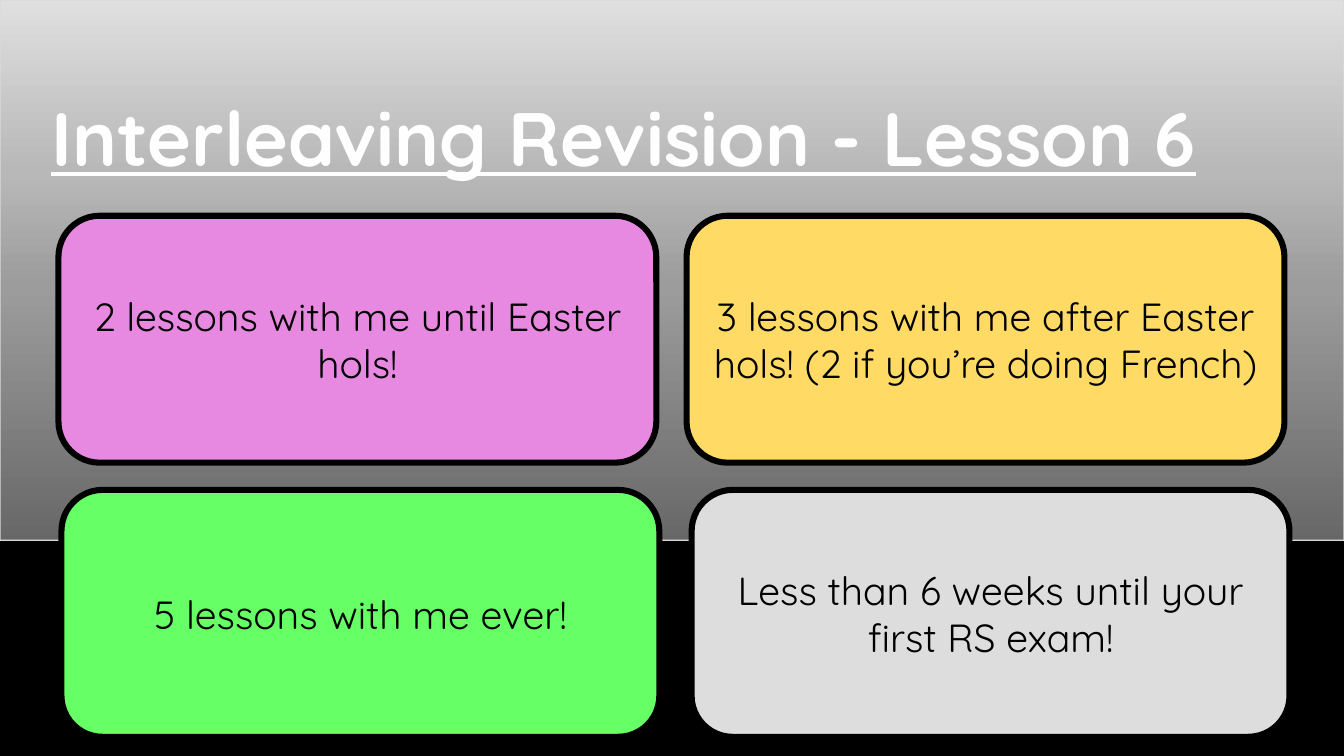
"""Build the revision lesson slide with a title and four cards."""
from dataclasses import dataclass

import lxml.etree
import pptx
import pptx.dml.color
import pptx.enum.shapes
import pptx.enum.text
import pptx.oxml.ns
import pptx.shapes.autoshape
import pptx.slide
import pptx.text.text
import pptx.util

RGB = pptx.dml.color.RGBColor
PX = 9144
FONT = "Quicksand"
BLACK = RGB(0x00, 0x00, 0x00)
WHITE = RGB(0xFE, 0xFE, 0xFE)
EDGE = RGB(0xDA, 0xDA, 0xDA)
PINK = RGB(0xE7, 0x89, 0xE0)
GOLD = RGB(0xFF, 0xDA, 0x65)
GREEN = RGB(0x66, 0xFF, 0x66)
GREY = RGB(0xDD, 0xDD, 0xDD)
STOPS = (
    (0, RGB(0x61, 0x61, 0x61)),
    (50, RGB(0x9C, 0x9C, 0x9C)),
    (70, RGB(0xB8, 0xB8, 0xB8)),
    (100, RGB(0xDF, 0xDF, 0xDF)),
)
PANEL = (
    (0, 0), (0, 536), (218, 536), (260, 567), (262, 568), (265, 569),
    (267, 568), (270, 567), (311, 536), (1333, 536),
)
CARD_W, CARD_H = 593, 245


@dataclass(frozen=True)
class Card:
    """A rounded card, placed in px."""
    left: int
    top: int
    fill: RGB
    text: str


CARDS = (
    Card(681, 214, GOLD, "3 lessons with me after Easter hols! (2 if you’re doing French)"),
    Card(58, 214, PINK, "2 lessons with me until Easter hols!"),
    Card(61, 486, GREEN, "5 lessons with me ever!"),
    Card(686, 486, GREY, "Less than 6 weeks until your first RS exam!"),
)


def px(size: int) -> pptx.util.Emu:
    """Turn px into EMU."""
    return pptx.util.Emu(size * PX)


def add_node(base: lxml.etree._Element, tag: str, **attrs: str) -> lxml.etree._Element:
    """Append a drawing element to base."""
    return lxml.etree.SubElement(base, pptx.oxml.ns.qn(tag), attrs)


def add_run(par: pptx.text.text._Paragraph, text: str, size: int, tint: RGB) -> pptx.text.text._Run:
    """Add one styled run."""
    run = par.add_run()
    run.text = text
    run.font.size = pptx.util.Pt(size)
    run.font.color.rgb = tint
    run.font.name = FONT
    return run


def style(shape: pptx.shapes.autoshape.Shape, tint: RGB, width: float) -> None:
    """Set the outline and drop the shadow."""
    shape.shadow.inherit = False
    shape.line.color.rgb = tint
    shape.line.width = pptx.util.Pt(width)


def draw_panel(slide: pptx.slide.Slide) -> None:
    """Draw the shaded panel behind everything."""
    form = slide.shapes.build_freeform(1333, 0, scale=PX)
    form.add_line_segments(PANEL, close=True)
    panel = form.convert_to_shape()
    style(panel, EDGE, 1)
    panel.fill.gradient()
    panel.fill.gradient_angle = 90
    stops = panel._element.spPr.find(".//" + pptx.oxml.ns.qn("a:gsLst"))
    for old in list(stops):
        stops.remove(old)
    for spot, tint in STOPS:
        stop = add_node(stops, "a:gs", pos=str(spot * 1000))
        add_node(stop, "a:srgbClr", val=str(tint))
    slide.shapes._spTree.insert(2, panel._element)


def draw_title(slide: pptx.slide.Slide) -> None:
    """Fill the title and give its text a soft shadow."""
    title = slide.shapes.title
    title.left, title.top, title.width, title.height = map(px, (41, 31, 1156, 154))
    frame = title.text_frame
    frame.word_wrap = True
    frame.auto_size = pptx.enum.text.MSO_AUTO_SIZE.NONE
    frame.vertical_anchor = pptx.enum.text.MSO_ANCHOR.BOTTOM
    par = frame.paragraphs[0]
    par.alignment = pptx.enum.text.PP_ALIGN.LEFT
    run = add_run(par, "Interleaving Revision - Lesson 6", 54, WHITE)
    run.font.bold = run.font.underline = True
    glow = lxml.etree.Element(pptx.oxml.ns.qn("a:effectLst"))
    shade = add_node(glow, "a:outerShdw", blurRad="38100", dist="38100", dir="2700000")
    tint = add_node(shade, "a:srgbClr", val=str(BLACK))
    add_node(tint, "a:alpha", val="50000")
    run._r.rPr.find(pptx.oxml.ns.qn("a:solidFill")).addnext(glow)


def draw_card(slide: pptx.slide.Slide, card: Card) -> None:
    """Draw one card with centred text."""
    kind = pptx.enum.shapes.MSO_SHAPE.ROUNDED_RECTANGLE
    shape = slide.shapes.add_shape(kind, *map(px, (card.left, card.top, CARD_W, CARD_H)))
    style(shape, BLACK, 4.33)
    shape.fill.solid()
    shape.fill.fore_color.rgb = card.fill
    frame = shape.text_frame
    frame.word_wrap = True
    frame.vertical_anchor = pptx.enum.text.MSO_ANCHOR.MIDDLE
    par = frame.paragraphs[0]
    par.alignment = pptx.enum.text.PP_ALIGN.CENTER
    add_run(par, card.text, 28, BLACK)


def main() -> None:
    """Build and save the deck."""
    deck = pptx.Presentation()
    deck.slide_width, deck.slide_height = px(1333), px(750)
    slide = deck.slides.add_slide(deck.slide_layouts[5])
    slide.background.fill.solid()
    slide.background.fill.fore_color.rgb = BLACK
    draw_panel(slide)
    draw_title(slide)
    for card in CARDS:
        draw_card(slide, card)
    deck.save("out.pptx")


if __name__ == "__main__":
    main()
